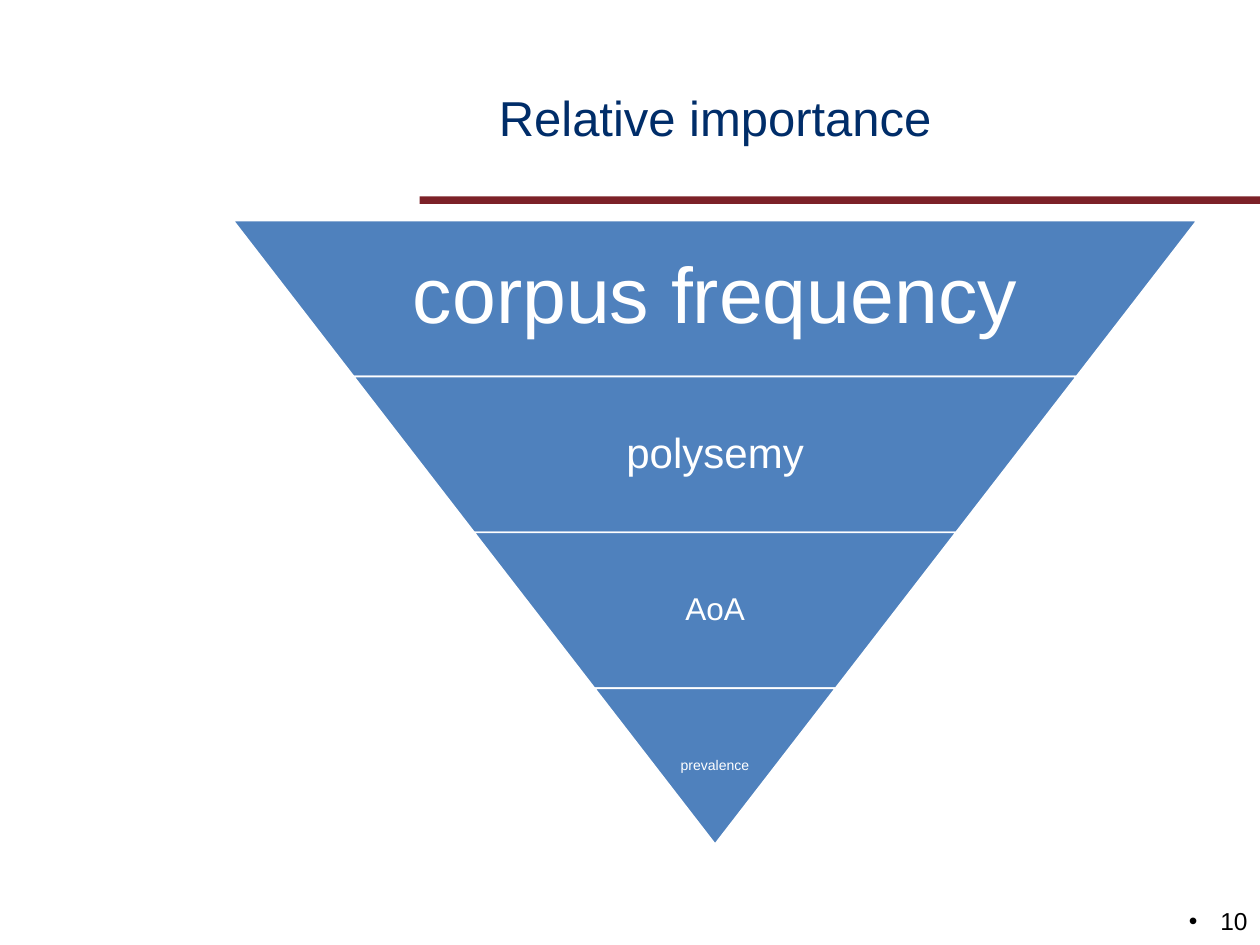
import pptx
import pptx.util
import pptx.dml.color
import pptx.enum.shapes
import pptx.enum.text
import pptx.oxml
import pptx.oxml.ns

Inches, Pt = pptx.util.Inches, pptx.util.Pt
RGBColor = pptx.dml.color.RGBColor
ALIGN = pptx.enum.text.PP_ALIGN
ANCHOR = pptx.enum.text.MSO_ANCHOR
SHAPE = pptx.enum.shapes.MSO_SHAPE

NAVY = RGBColor(0x00, 0x2D, 0x69)
MAROON = RGBColor(0x7C, 0x21, 0x28)
BLUE = RGBColor(0x4F, 0x81, 0xBD)
WHITE = RGBColor(0xFF, 0xFF, 0xFF)
BLACK = RGBColor(0x00, 0x00, 0x00)


class Deck:
    """Holds the style and the current slide, and adds its elements."""

    font = "Arial"

    def __init__(self, width, height):
        self.prs = pptx.Presentation()
        self.prs.slide_width, self.prs.slide_height = Inches(width), Inches(height)
        self.s = self.prs.slides.add_slide(self.prs.slide_layouts[5])

    def set_text(self, sp, text, size, color, align=ALIGN.CENTER, spacing=1.0, **frame):
        tf = sp.text_frame
        for name, value in {"word_wrap": True, **frame}.items():
            setattr(tf, name, value)
        p = tf.paragraphs[0]
        p.alignment, p.line_spacing = align, spacing
        r = p.add_run()
        r.text = text
        for name, value in {"name": self.font, "size": Pt(size)}.items():
            setattr(r.font, name, value)
        r.font.color.rgb = color
        return p

    def title(self, text, box):
        sp = self.s.shapes.title
        for name, value in zip(("left", "top", "width", "height"), box):
            setattr(sp, name, Inches(value))
        self.set_text(sp, text, 28, NAVY, vertical_anchor=ANCHOR.MIDDLE)

    def shape(self, shapes, kind, box, fill, line=None):
        sp = shapes.add_shape(kind, *map(Inches, box))
        sp.shadow.inherit = False
        sp.fill.solid()
        sp.fill.fore_color.rgb = fill
        if line is None:
            sp.line.fill.background()
        else:
            sp.line.color.rgb, sp.line.width = line, Pt(1)
        return sp

    def bar(self, box, fill):
        self.shape(self.s.shapes, SHAPE.RECTANGLE, box, fill)

    def page_number(self, text, box):
        sp = self.s.shapes.add_textbox(*map(Inches, box))
        p = self.set_text(sp, text, 14, BLACK, ALIGN.RIGHT)
        pPr = p._p.get_or_add_pPr()
        pPr.set("marL", str(Inches(0.25)))
        pPr.set("indent", str(-Inches(0.25)))
        ns = pptx.oxml.ns.nsdecls("a")
        pPr.append(pptx.oxml.parse_xml(f'<a:buFont {ns} typeface="Arial"/>'))
        pPr.append(pptx.oxml.parse_xml(f'<a:buChar {ns} char="•"/>'))

    def inverted_pyramid(self, levels, left, top, width, height):
        shapes = self.s.shapes.add_group_shape().shapes
        n = len(levels)
        step, h = width / n, height / n
        for i, (text, size, inset) in enumerate(levels):
            w, y = width - i * step, top + i * h
            sp = self.shape(shapes, SHAPE.TRAPEZOID, (left + i * step / 2, y, w, h), BLUE, WHITE)
            sp.rotation = 180
            sp.adjustments[0] = step / 2 / h
            text_w = w if i == n - 1 else 0.65 * w
            box = (left + (width - text_w) / 2, y, text_w, h)
            margins = {f"margin_{side}": Inches(inset) for side in ("left", "top", "right", "bottom")}
            self.set_text(shapes.add_textbox(*map(Inches, box)), text, size, WHITE,
                          spacing=0.9, vertical_anchor=ANCHOR.MIDDLE, **margins)


def main():
    deck = Deck(10, 7.5)
    deck.bar((3.33, 1.56, 6.67, 0.06), MAROON)
    deck.title("Relative importance", (1.85, 0.3, 7.65, 1.25))
    deck.page_number("10", (7.67, 7.14, 2.33, 0.36))
    levels = [("corpus frequency", 45, 0.06), ("polysemy", 24, 0.03),
              ("AoA", 18, 0.03), ("prevalence", 8, 0.01)]
    deck.inverted_pyramid(levels, 1.85, 1.75, 7.65, 4.95)
    deck.prs.save("out.pptx")


if __name__ == "__main__":
    main()
